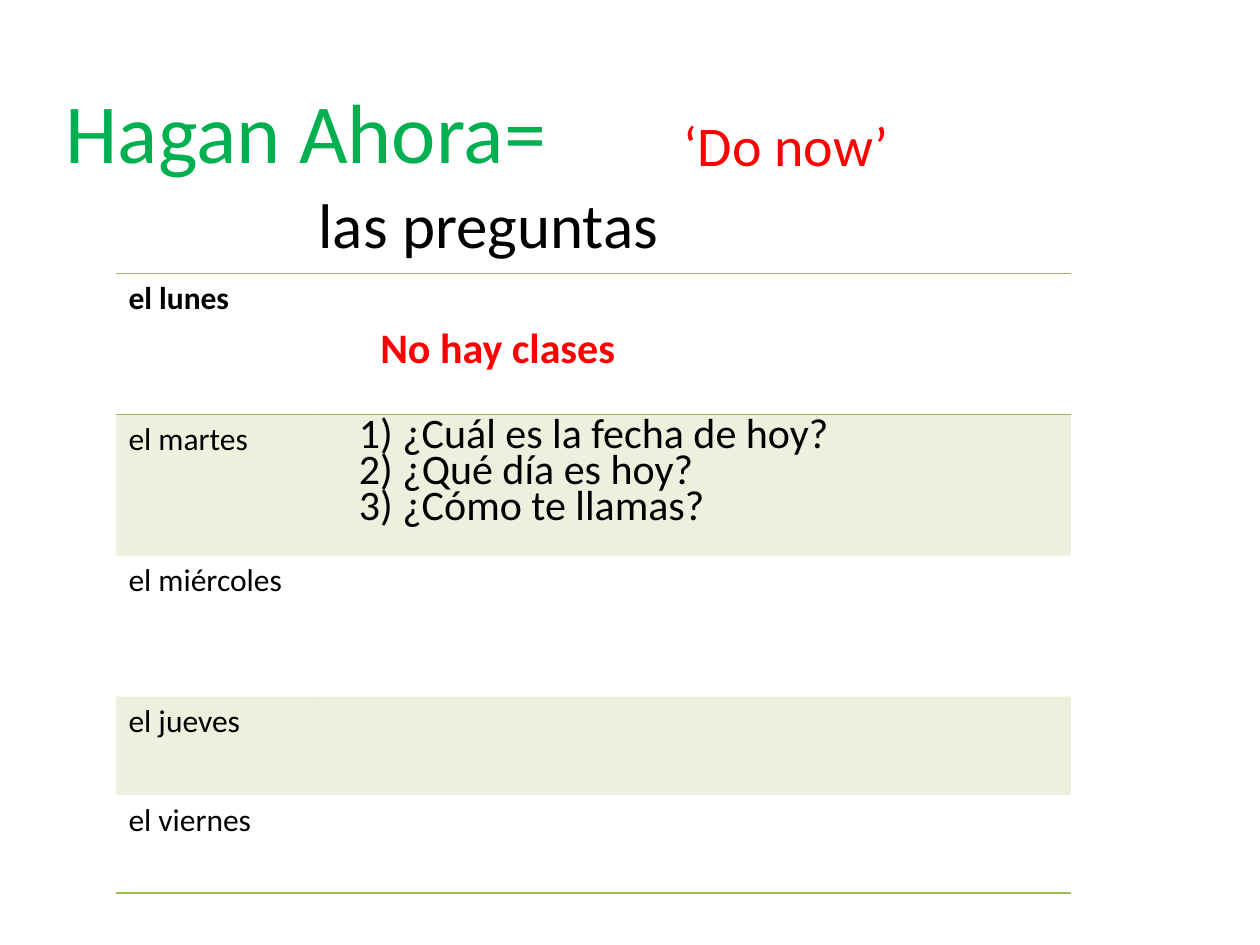
from lxml import etree
from pptx import Presentation
from pptx.dml.color import RGBColor
from pptx.enum import text
from pptx.oxml import ns
from pptx.util import Inches, Pt

GREEN = "9BBB59"
NO_STYLE = "{2D5ABB26-0587-4C30-8999-92F81FD0307C}"
DAYS = ["el lunes", "el martes", "el miércoles", "el jueves", "el viernes"]
QUESTIONS = ["1) ¿Cuál es la fecha de hoy?", "2) ¿Qué día es hoy?", "3) ¿Cómo te llamas?"]
QUESTION_WIDTHS = [3.96, 2.88, 2.97]


def rgb(value):
    return RGBColor.from_string(value)


def write(tf, content, size=18, color="000000", bold=False):
    p = tf.paragraphs[0]
    p.alignment = text.PP_ALIGN.LEFT
    r = p.add_run()
    r.text = content
    r.font.name = "Calibri"
    r.font.size = Pt(size)
    r.font.bold = bold
    r.font.color.rgb = rgb(color)


def fit_text(sp, content, **fmt):
    tf = sp.text_frame
    tf.word_wrap = False
    tf.auto_size = text.MSO_AUTO_SIZE.SHAPE_TO_FIT_TEXT
    tf.vertical_anchor = text.MSO_ANCHOR.TOP
    write(tf, content, **fmt)


def add_title(slide, content, left, top, width, height, **fmt):
    sp = slide.shapes.title
    sp.left, sp.top, sp.width, sp.height = map(Inches, (left, top, width, height))
    fit_text(sp, content, **fmt)


def add_label(slide, content, left, top, width, height, **fmt):
    box = map(Inches, (left, top, width, height))
    fit_text(slide.shapes.add_textbox(*box), content, **fmt)


def add_border(cell, side):
    tcPr = cell._tc.get_or_add_tcPr()
    ln = etree.SubElement(tcPr, ns.qn(f"a:ln{side}"), w=str(Pt(1)))
    fill = etree.SubElement(ln, ns.qn("a:solidFill"))
    etree.SubElement(fill, ns.qn("a:srgbClr"), val=GREEN)


def fill_cell(cell, banded):
    if not banded:
        cell.fill.background()
        return
    cell.fill.solid()
    cell.fill.fore_color.rgb = rgb(GREEN)
    clr = cell._tc.tcPr.find(".//" + ns.qn("a:srgbClr"))
    etree.SubElement(clr, ns.qn("a:alpha"), val="20000")


def add_week_table(slide):
    box = map(Inches, (0.92, 2.17, 7.58, 4.92))
    table = slide.shapes.add_table(len(DAYS), 2, *box).table
    table._tbl.tblPr.find(ns.qn("a:tableStyleId")).text = NO_STYLE
    table.first_row = table.horz_banding = False
    for col, width in zip(table.columns, (1.61, 5.97)):
        col.width = Inches(width)
    borders = {0: "TB", len(DAYS) - 1: "B"}
    for i, (row, day) in enumerate(zip(table.rows, DAYS)):
        row.height = Inches(1.12 if i < 3 else 0.78)
        for cell in row.cells:
            for side in borders.get(i, ""):
                add_border(cell, side)
            fill_cell(cell, banded=i % 2 == 1)
        write(row.cells[0].text_frame, day, bold=i == 0)


def main():
    prs = Presentation()
    prs.slide_width, prs.slide_height = Inches(10), Inches(7.5)
    slide = prs.slides.add_slide(prs.slide_layouts[5])
    add_title(slide, "Hagan Ahora=", 0.42, 0.58, 4.06, 0.91, size=48, color="00B050")
    add_label(slide, "‘Do now’", 5.33, 0.83, 1.85, 0.64, size=32, color="FF0000")
    add_week_table(slide)
    for i, (question, width) in enumerate(zip(QUESTIONS, QUESTION_WIDTHS)):
        add_label(slide, question, 2.75, 3.18 + i * 0.285, width, 0.5, size=24)
    add_label(slide, "las preguntas", 2.43, 1.42, 2.92, 0.71, size=36)
    add_label(slide, "No hay clases", 2.92, 2.5, 2.08, 0.5, size=24, color="FF0000", bold=True)
    prs.save("out.pptx")


if __name__ == "__main__":
    main()
